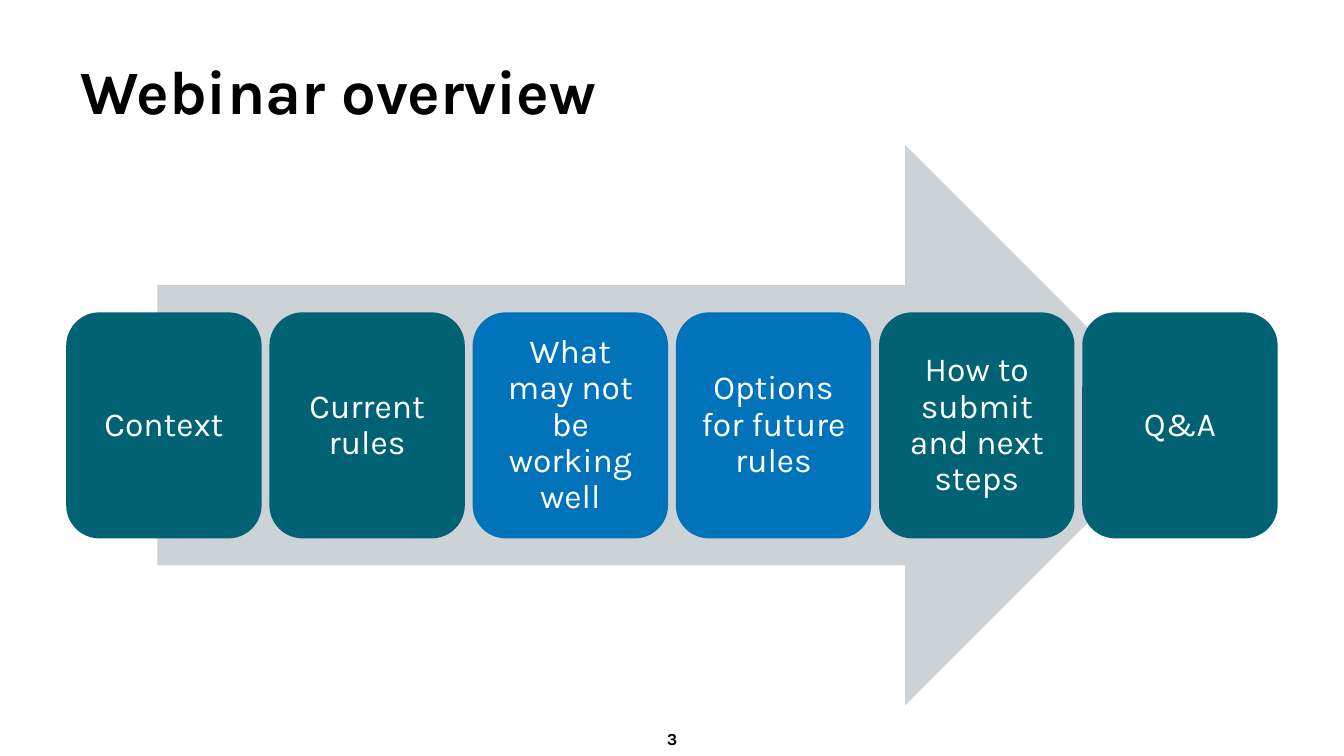
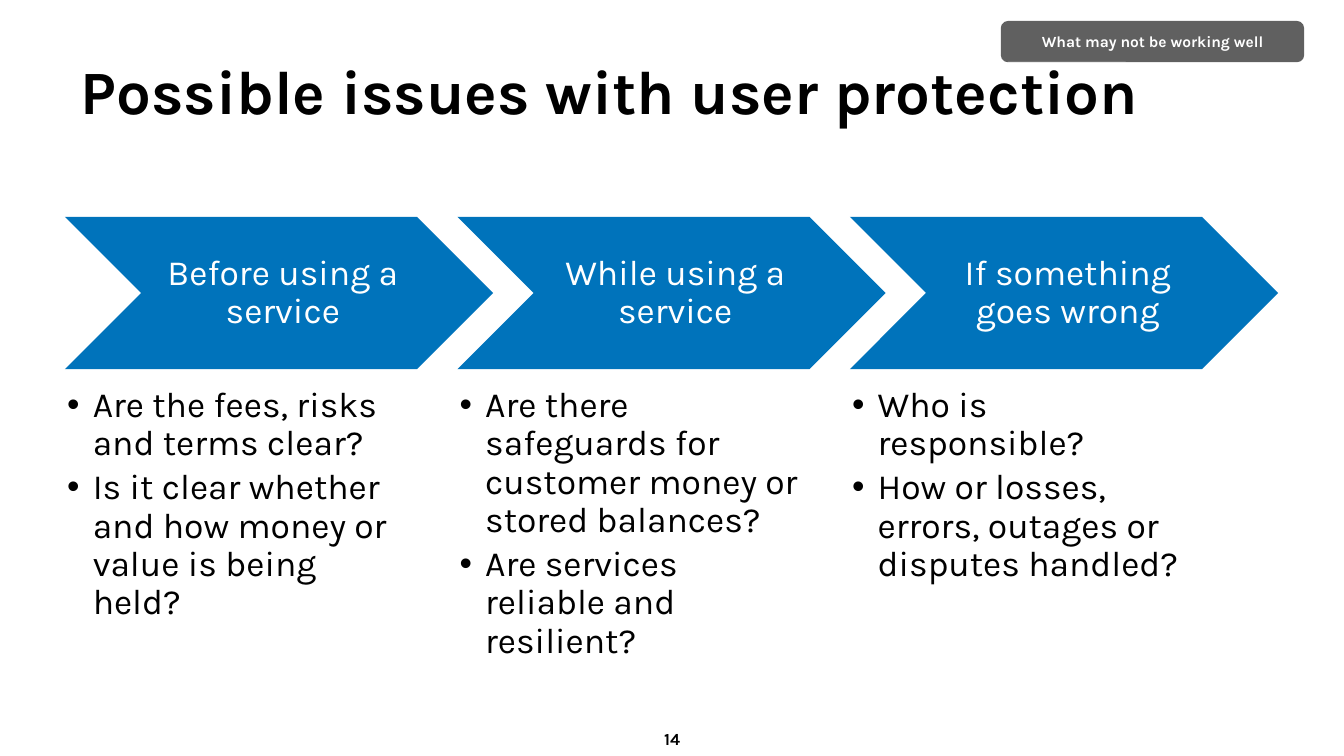
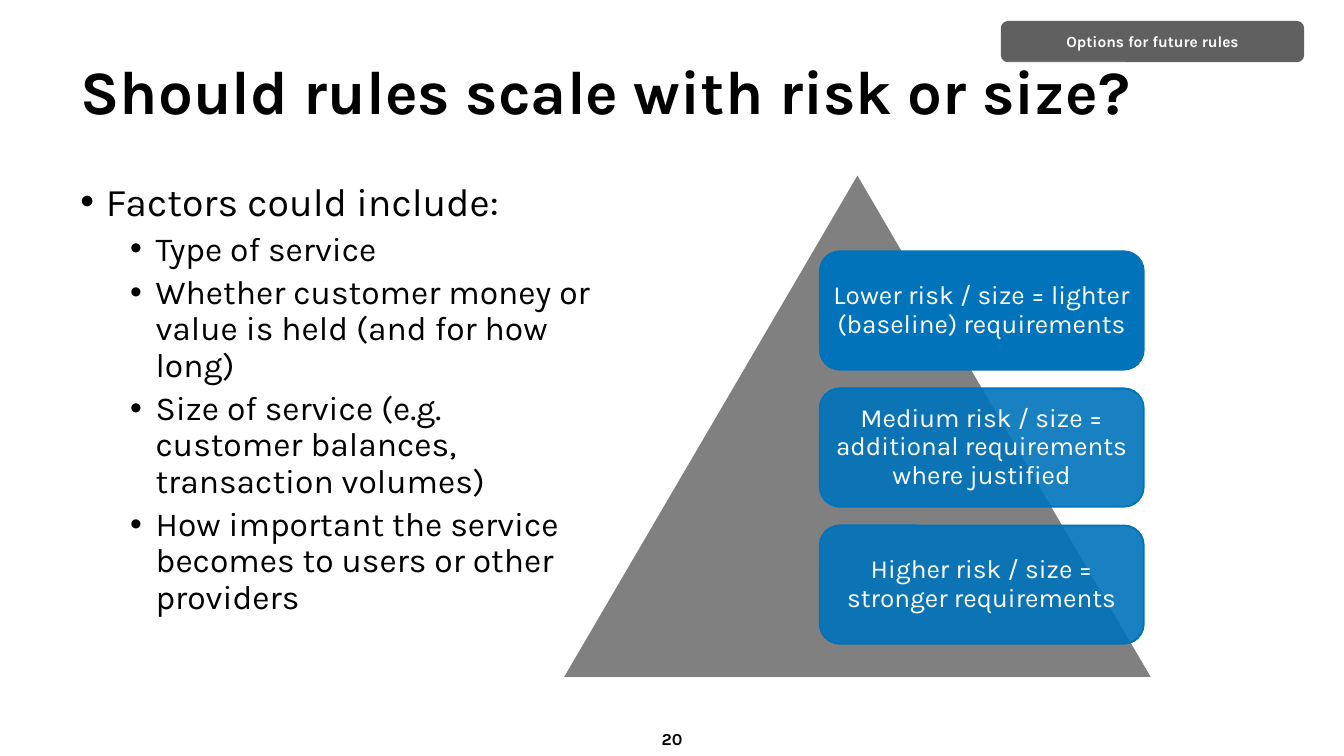
from lxml import etree
from pptx import Presentation
from pptx.dml.color import RGBColor
from pptx.enum import shapes as sh, text as tx
from pptx.oxml import ns
from pptx.util import Inches, Pt

# Shared look
FONT = "Karla"
BLACK, WHITE = "000000", "FFFFFF"
TEAL, BLUE = "016273", "0073BB"
SILVER, GREY, SLATE = "CCD2D5", "808080", "606060"
KIND = sh.MSO_SHAPE
LEFT, MID = tx.PP_ALIGN.LEFT, tx.PP_ALIGN.CENTER
TOP, CENTRE = tx.MSO_ANCHOR.TOP, tx.MSO_ANCHOR.MIDDLE
INSET = (0.1, 0.05, 0.1, 0.05)


def color(code):
    return RGBColor.from_string(code)


def add(parent, tag, **attrs):
    """Append a drawing element with its attributes."""
    return etree.SubElement(parent, ns.qn(tag), **attrs)


def frame(shape, inset=INSET, anchor=CENTRE):
    """Set up the text frame of a shape and return it."""
    body = shape.text_frame
    body.word_wrap = True
    body.auto_size = tx.MSO_AUTO_SIZE.NONE
    body.vertical_anchor = anchor
    body.margin_left, body.margin_top, body.margin_right, body.margin_bottom = map(Inches, inset)
    return body


def style(para, words, size, code=BLACK, bold=False, align=LEFT, pitch=0.9):
    para.text = words
    para.alignment = align
    para.line_spacing = pitch
    font = para.font
    font.name, font.size, font.bold = FONT, Pt(size), bold
    font.color.rgb = color(code)


def bullet(para, words, size, indent=0.19, level=0, before=0, after=0):
    props = para._p.get_or_add_pPr()
    props.set("marL", str(Inches(indent)))
    props.set("indent", str(-Inches(0.19)))
    add(props, "a:buFont", typeface="Arial")
    add(props, "a:buChar", char="•")
    para.level = level
    para.space_before, para.space_after = Pt(before), Pt(after)
    style(para, words, size)


def lines(body, count):
    """Give the frame the wanted number of paragraphs."""
    return [body.paragraphs[0]] + [body.add_paragraph() for _ in range(count - 1)]


def block(slide, kind, box, fill, line=1, alpha=None):
    shape = slide.shapes.add_shape(kind, *map(Inches, box))
    shape.shadow.inherit = False
    shape.fill.solid()
    shape.fill.fore_color.rgb = color(fill)
    if alpha:
        tint = shape.fill._xPr.find(".//" + ns.qn("a:srgbClr"))
        add(tint, "a:alpha", val=str(alpha * 1000))
    if line:
        shape.line.color.rgb = color(fill)
        shape.line.width = Pt(line)
        add(shape.line._get_or_add_ln(), "a:miter", lim="800000")
    else:
        shape.line.fill.background()
    return shape


def label(shape, words, size, inset, **look):
    style(frame(shape, inset).paragraphs[0], words, size, WHITE, align=MID, **look)


def textbox(slide, box):
    return slide.shapes.add_textbox(*map(Inches, box))


# Title, page number and section tag
def page(deck, title, number, tag=None):
    slide = deck.slides.add_slide(deck.slide_layouts[5])
    head = slide.shapes.title
    head.left, head.top, head.width, head.height = map(Inches, (0.5, 0.23, 9, 0.94))
    style(frame(head).paragraphs[0], title, 33, bold=True)
    foot = frame(textbox(slide, (0.69, 5.35, 8.62, 0.3)))
    style(foot.paragraphs[0], str(number), 9, bold=True, align=MID, pitch=1)
    if tag:
        pill = block(slide, KIND.ROUNDED_RECTANGLE, (7.45, 0.16, 2.25, 0.3), SLATE, 0.5)
        label(pill, tag, 8.3, (0.04, 0.01, 0.04, 0.01), bold=True, pitch=1)
    return slide


# Agenda steps laid over a wide arrow
def agenda(slide, box, steps):
    left, top, width, height = box
    block(slide, KIND.RIGHT_ARROW, (left + 0.67, top, width - 1.35, height), SILVER, 0)
    wide, tall = 1.44, 0.4 * height
    step = (width - wide) / (len(steps) - 1)
    for i, (words, fill) in enumerate(steps):
        spot = (left + i * step, top + (height - tall) / 2, wide, tall)
        card = block(slide, KIND.ROUNDED_RECTANGLE, spot, fill)
        label(card, words, 18, (0.08, 0.07, 0.08, 0.07))


# Chevrons with questions below
def stages(slide, box, items):
    left, top, width, height = box
    wide, tall = 3.16, 1.12
    step = (width - wide) / (len(items) - 1)
    for i, (name, asks) in enumerate(items):
        x = left + i * step
        arrow = block(slide, KIND.CHEVRON, (x, top, wide, tall), BLUE)
        label(arrow, name, 19, (0.08, 0.03, 0.03, 0.03))
        spot = (x, top + 1.26, 0.8 * wide, height - 1.26)
        body = frame(textbox(slide, spot), (0,) * 4, TOP)
        for para, ask in zip(lines(body, len(asks)), asks):
            bullet(para, ask, 19, level=1, after=3)


# Triangle with stacked tiers
def pyramid(slide, box, tiers):
    left, top, width, height = box
    block(slide, KIND.ISOSCELES_TRIANGLE, box, GREY)
    for i, words in enumerate(tiers):
        spot = (left + 1.89, top + 0.55 + 1.02 * i, 2.41, 0.88)
        tier = block(slide, KIND.ROUNDED_RECTANGLE, spot, BLUE, alpha=90 if i else None)
        label(tier, words, 14, (0.05, 0.06, 0.05, 0.06))


# Lead bullet with nested points
def outline(slide, box, lead, points):
    body = frame(textbox(slide, box), anchor=TOP)
    first, *rest = lines(body, len(points) + 1)
    bullet(first, lead, 21)
    for para, words in zip(rest, points):
        bullet(para, words, 18, indent=0.56, level=1, before=3.8)


def main():
    deck = Presentation()
    deck.slide_width = Inches(10)
    deck.slide_height = deck.slide_width * 9 // 16

    agenda(page(deck, "Webinar overview", 3), (0.5, 1.08, 9, 4.17), [
        ("Context", TEAL),
        ("Current rules", TEAL),
        ("What may not be working well", BLUE),
        ("Options for future rules", BLUE),
        ("How to submit and next steps", TEAL),
        ("Q&A", TEAL),
    ])

    issues = page(deck, "Possible issues with user protection", 14, "What may not be working well")
    stages(issues, (0.5, 1.62, 9, 3.09), [
        ("Before using a service", [
            "Are the fees, risks and terms clear?",
            "Is it clear whether and how money or value is being held?"]),
        ("While using a service", [
            "Are there safeguards for customer money or stored balances?",
            "Are services reliable and resilient?"]),
        ("If something goes wrong", [
            "Who is responsible?",
            "How or losses, errors, outages or disputes handled?"]),
    ])

    scale = page(deck, "Should rules scale with risk or size?", 20, "Options for future rules")
    pyramid(scale, (4.21, 1.32, 4.34, 3.71), [
        "Lower risk / size = lighter (baseline) requirements",
        "Medium risk / size = additional requirements where justified",
        "Higher risk / size = stronger requirements",
    ])
    outline(scale, (0.5, 1.31, 4.03, 3.71), "Factors could include:", [
        "Type of service",
        "Whether customer money or value is held (and for how long)",
        "Size of service (e.g. customer balances, transaction volumes)",
        "How important the service becomes to users or other providers",
    ])
    deck.save("out.pptx")


if __name__ == "__main__":
    main()
